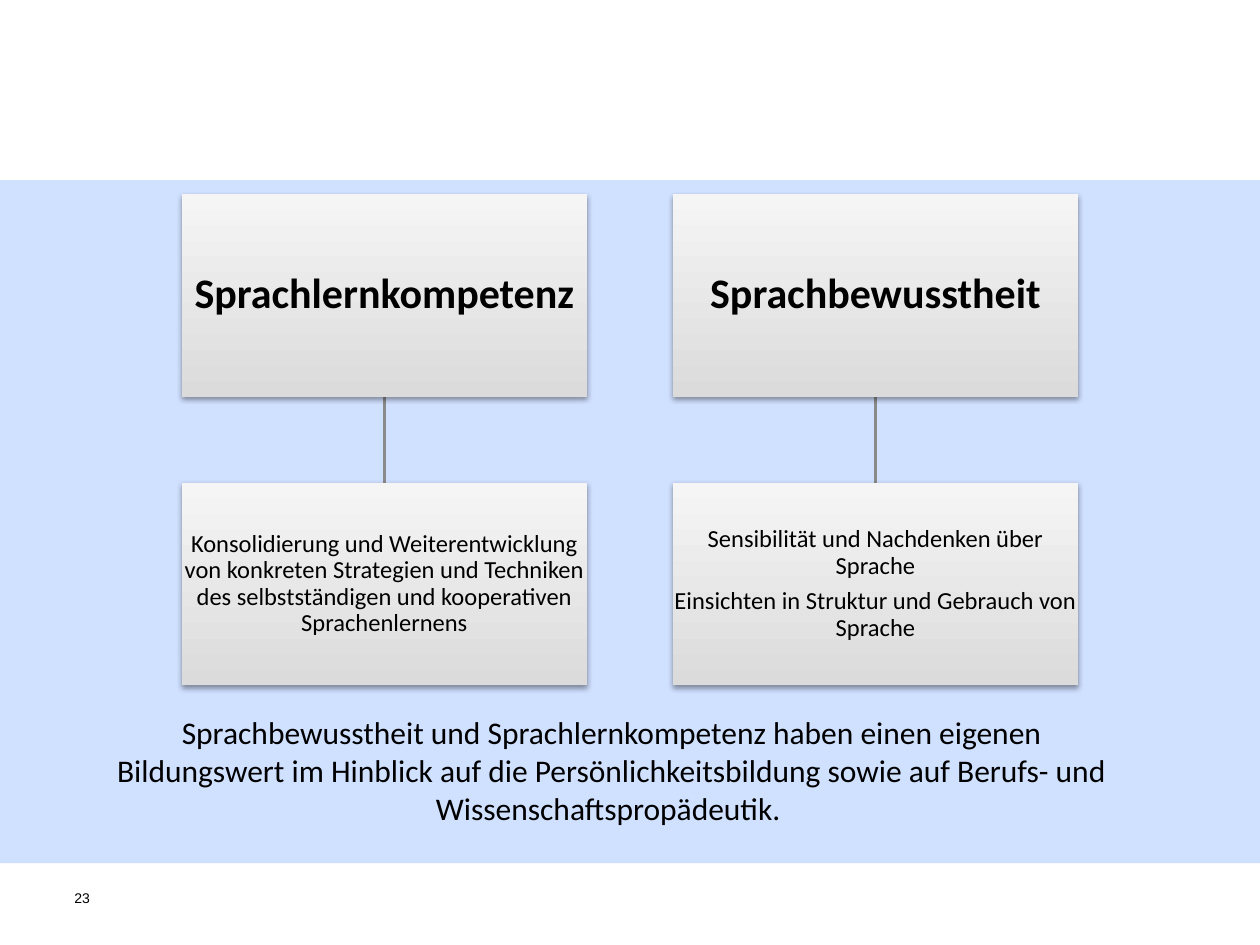
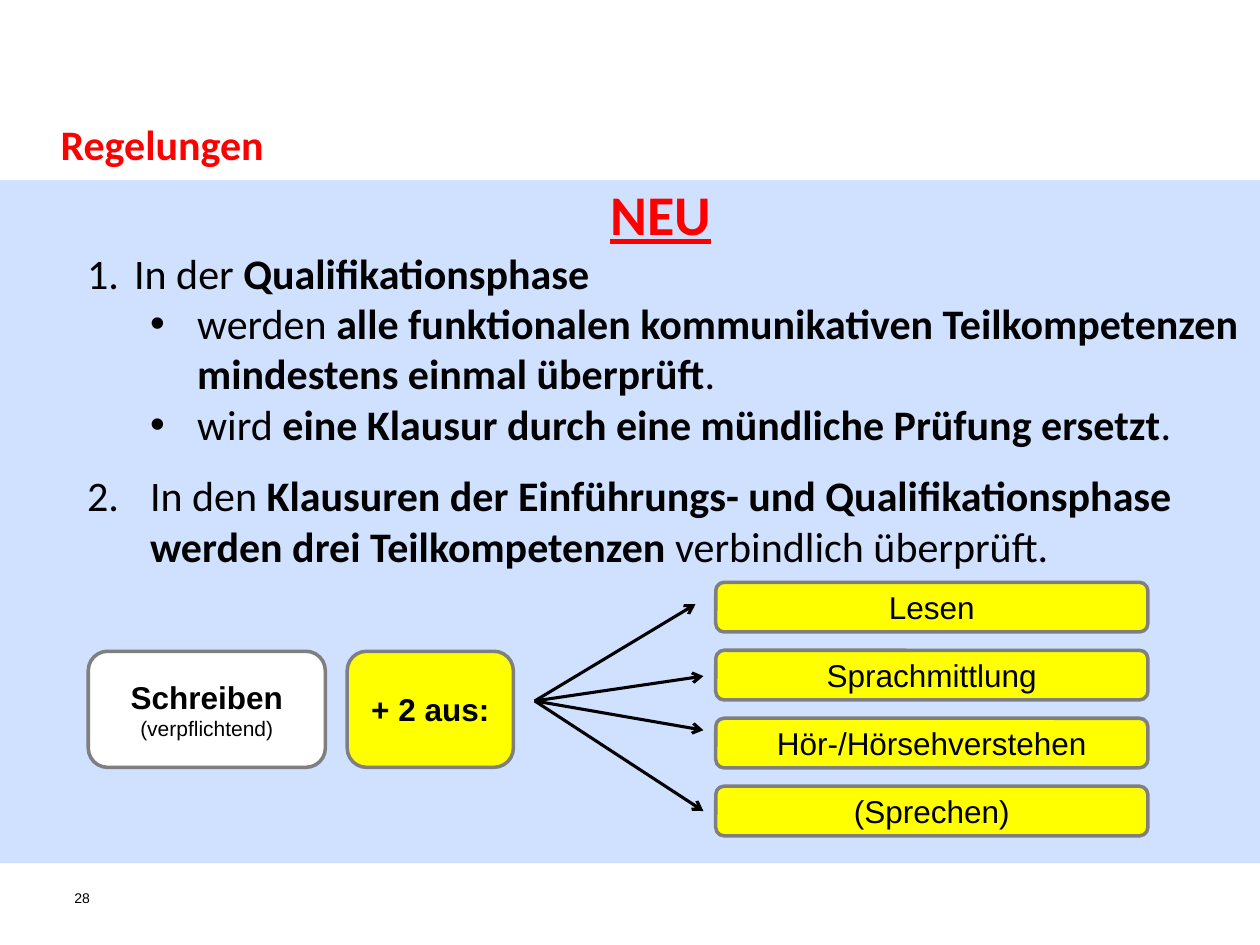
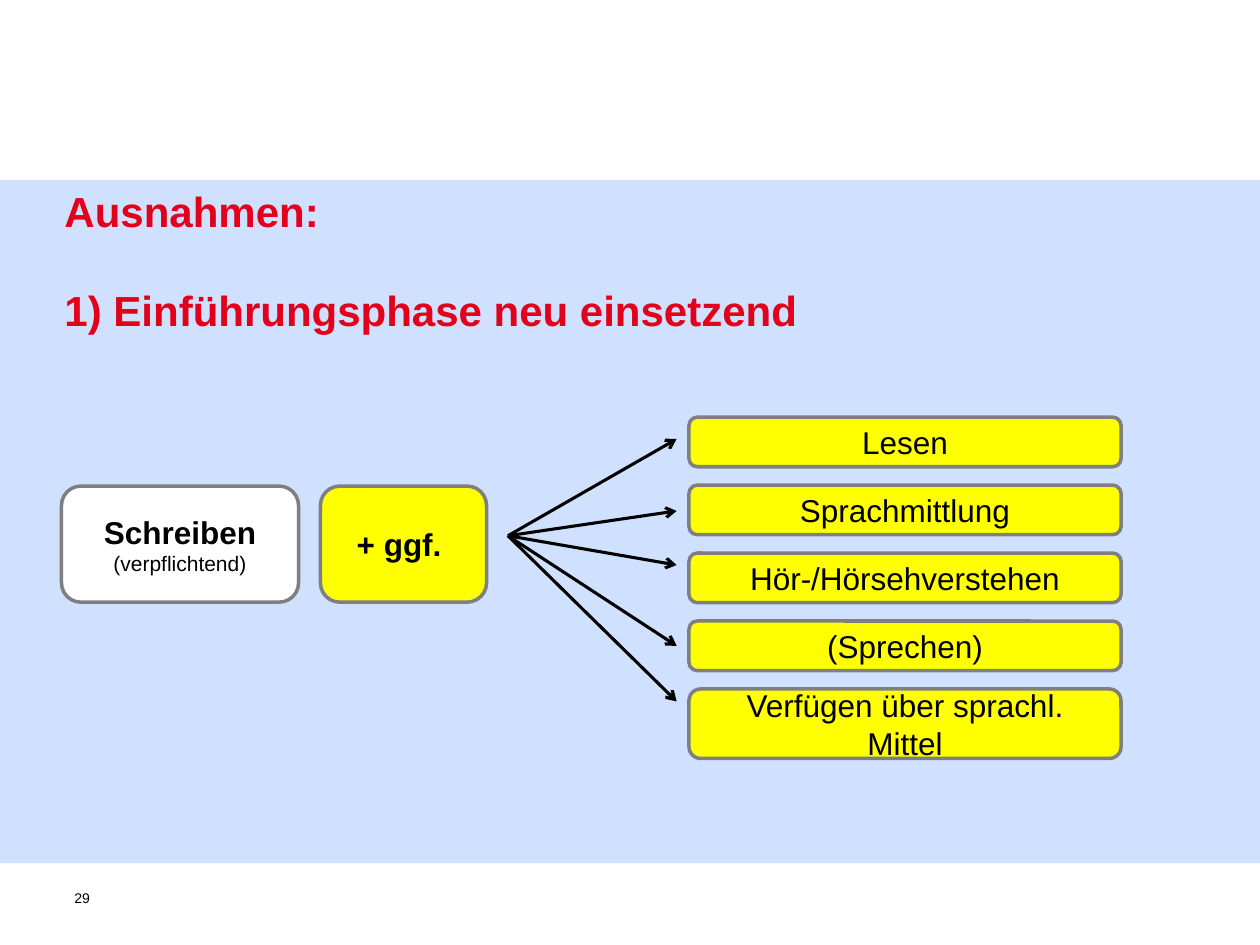
from dataclasses import dataclass
from pptx import Presentation
from pptx.dml.color import RGBColor
from pptx.enum.shapes import MSO_CONNECTOR, MSO_SHAPE
from pptx.enum.text import MSO_ANCHOR, MSO_AUTO_SIZE, PP_ALIGN
from pptx.oxml import parse_xml
from pptx.oxml.ns import nsdecls, qn
from pptx.util import Cm, Pt


@dataclass(frozen=True)
class Style:
    size: float
    font: str = "Calibri"
    color: str = "000000"
    bold: bool = False
    under: bool = False


class Theme:
    band, frame, yellow, white, black = "6699FF", "7F7F7F", "FFFF00", "FFFFFF", "000000"
    dark, light, link = "DBDBDB", "F5F5F5", "8A8A8A"
    head = Style(24, bold=True)
    note = Style(14)
    close = Style(18)
    rule = Style(24, color="FF0000", bold=True)
    new = Style(32, color="FF0000", bold=True, under=True)
    gap = Style(32)
    item = Style(24)
    key = Style(24, bold=True)
    warn = Style(24, "Arial", "E2001A", True)
    box = Style(18, "Arial")
    main = Style(18, "Arial", bold=True)
    small = Style(12, "Arial")
    page = Style(8, "Arial")


T = Theme

GOALS = [
    ("Sprachlernkompetenz", [
        "Konsolidierung und Weiterentwicklung von konkreten Strategien und Techniken "
        "des selbstständigen und kooperativen Sprachenlernens"]),
    ("Sprachbewusstheit", [
        "Sensibilität und Nachdenken über Sprache",
        "Einsichten in Struktur und Gebrauch von Sprache"]),
]
VALUE = (
    "Sprachbewusstheit und Sprachlernkompetenz haben einen eigenen Bildungswert im "
    "Hinblick auf die Persönlichkeitsbildung sowie auf Berufs- und Wissenschaftspropädeutik. ")

RULES = [
    ("none", [("NEU", T.new), (" ", T.gap)]),
    ("one", [("In der ", T.item), ("Qualifikationsphase", T.key)]),
    ("dot", [("werden ", T.item),
             ("alle funktionalen kommunikativen Teilkompetenzen mindestens einmal überprüft", T.key),
             (".", T.item)]),
    ("dot", [("wird ", T.item),
             ("eine Klausur durch eine mündliche Prüfung ersetzt", T.key),
             (".", T.item)]),
    ("two", [("In den ", T.item),
             ("Klausuren der Einführungs- und Qualifikationsphase werden drei Teilkompetenzen ", T.key),
             ("verbindlich überprüft.", T.item)]),
]
MARKS = {
    "none": (0, 0, 0, 0, "<a:buNone {}/>"),
    "one": (0, 0.95, 0.95, 0, '<a:buAutoNum {} type="arabicPeriod"/>'),
    "dot": (1, 2.22, 0.95, 0, '<a:buChar {} char="•"/>'),
    "two": (0, 1.27, 1.27, 12, '<a:buAutoNum {} type="arabicPeriod" startAt="2"/>'),
}

SKILLS = ["Lesen", "Sprachmittlung", "Hör-/Hörsehverstehen", "(Sprechen)"]
EXTRA = "Verfügen über sprachl. Mittel"
TIPS = [-0.95, 0.5, 1.59, 3.22, 4.34]


def write(frame, lines, align=PP_ALIGN.LEFT, pad=None, anchor=MSO_ANCHOR.TOP, gap=0, lead=None):
    frame.word_wrap = True
    frame.auto_size = MSO_AUTO_SIZE.NONE
    frame.vertical_anchor = anchor
    if pad is not None:
        frame.margin_left = frame.margin_right = frame.margin_bottom = frame.margin_top = Cm(pad)
    for i, runs in enumerate(lines):
        para = frame.paragraphs[0] if i == 0 else frame.add_paragraph()
        para.alignment = align
        para.space_before = Pt(gap if i else 0)
        if lead:
            para.line_spacing = lead
        for text, style in runs:
            run = para.add_run()
            run.text = text
            font = run.font
            font.name, font.size = style.font, Pt(style.size)
            font.bold, font.underline = style.bold, style.under
            font.color.rgb = RGBColor.from_string(style.color)


def place(shape, x, y, w, h):
    shape.left, shape.top, shape.width, shape.height = Cm(x), Cm(y), Cm(w), Cm(h)


def block(slide, kind, x, y, w, h, fill, line=None):
    shape = slide.shapes.add_shape(kind, Cm(x), Cm(y), Cm(w), Cm(h))
    shape.shadow.inherit = False
    shape.fill.solid()
    shape.fill.fore_color.rgb = RGBColor.from_string(fill)
    if line:
        shape.line.color.rgb = RGBColor.from_string(line)
        shape.line.width = Pt(2)
    else:
        shape.line.fill.background()
    return shape


def join(slide, start, end, color, width, arrow=False):
    line = slide.shapes.add_connector(MSO_CONNECTOR.STRAIGHT, *map(Cm, start + end))
    line.line.color.rgb = RGBColor.from_string(color)
    line.line.width = Pt(width)
    props = line._element.spPr
    if arrow:
        props.find(qn("a:ln")).append(parse_xml(f'<a:tailEnd {nsdecls("a")} type="arrow"/>'))
    props.append(parse_xml(f'<a:effectLst {nsdecls("a")}/>'))


def add_band(deck, slide):
    band = block(slide, MSO_SHAPE.RECTANGLE, 0, 3.63, 25.4, 13.77, T.band)
    tint = band._element.spPr.find(".//" + qn("a:srgbClr"))
    tint.append(parse_xml(f'<a:alpha {nsdecls("a")} val="30000"/>'))
    band._element.nvSpPr.cNvPr.set("id", "99")
    deck.slide_master.shapes._spTree.insert(2, band._element)


def add_page(deck, layout, number):
    slide = deck.slides.add_slide(deck.slide_layouts[layout])
    label = slide.shapes.add_textbox(Cm(1.5), Cm(17.93), Cm(0.81), Cm(0.94))
    write(label.text_frame, [[(number, T.page)]], pad=0)
    return slide


def add_title(slide, lines, x, y, w, h, gap=0):
    title = slide.shapes.title
    place(title, x, y, w, h)
    write(title.text_frame, lines, pad=0, gap=gap)
    title.text_frame.margin_top = Cm(0.41)


def add_card(slide, x, y, w, h, lines):
    card = block(slide, MSO_SHAPE.RECTANGLE, x, y, w, h, T.light)
    card.fill.gradient()
    card.fill.gradient_angle = 90
    for stop, color in zip(card.fill.gradient_stops, (T.dark, T.light)):
        stop.color.rgb = RGBColor.from_string(color)
    card._element.spPr.find(qn("a:effectLst")).append(parse_xml(
        f'<a:outerShdw {nsdecls("a")} blurRad="40000" dist="20000" dir="5400000" rotWithShape="0">'
        '<a:srgbClr val="000000"><a:alpha val="38000"/></a:srgbClr></a:outerShdw>'))
    write(card.text_frame, lines, PP_ALIGN.CENTER, 0.03, MSO_ANCHOR.MIDDLE, gap=5, lead=0.9)


def add_goals(slide):
    wide, high, top, low = 8.18, 4.09, 3.91, 9.73
    for i, (name, notes) in enumerate(GOALS):
        x = 3.66 + i * 9.9
        mid = x + wide / 2
        join(slide, (mid, top + high), (mid, low), T.link, 2)
        add_card(slide, x, top, wide, high, [[(name, T.head)]])
        add_card(slide, x, low, wide, high, [[(note, T.note)] for note in notes])
    close = slide.shapes.add_textbox(Cm(1.78), Cm(14.25), Cm(21.11), Cm(3.33))
    write(close.text_frame, [[(VALUE, T.close)]], PP_ALIGN.CENTER)


def add_rules(slide):
    body = slide.placeholders[1]
    place(body, 1.5, 3.5, 23.9, 8.2)
    write(body.text_frame, [runs for _, runs in RULES])
    for para, (kind, _) in zip(body.text_frame.paragraphs, RULES):
        level, left, hang, gap, mark = MARKS[kind]
        para.level = level
        para.space_before = Pt(gap)
        props = para._p.get_or_add_pPr()
        props.set("marL", str(Cm(left)))
        props.set("indent", str(-Cm(hang)))
        props.append(parse_xml(mark.format(nsdecls("a"))))
    body.text_frame.paragraphs[0].alignment = PP_ALIGN.CENTER


def add_box(slide, x, y, w, h, fill, lines):
    box = block(slide, MSO_SHAPE.ROUNDED_RECTANGLE, x, y, w, h, fill, T.frame)
    write(box.text_frame, lines, PP_ALIGN.CENTER, anchor=MSO_ANCHOR.MIDDLE)


def add_flow(slide, x, y, plus, skills, first=12.4):
    add_box(slide, x, y, 4.78, 2.34, T.white,
            [[("Schreiben", T.main)], [("(verpflichtend)", T.small)]])
    add_box(slide, x + 5.22, y, 3.35, 2.34, T.yellow, [[(plus, T.main)]])
    for i, (skill, tip) in enumerate(zip(skills, TIPS)):
        high = 1.4 if skill == EXTRA else 1
        add_box(slide, x + 12.65, y - 1.39 + i * 1.37, 8.71, high, T.yellow, [[(skill, T.box)]])
        reach = 12.4 if i else first
        join(slide, (x + 9, y + 1), (x + reach, y + tip), T.black, 1.75, arrow=True)


def main():
    deck = Presentation()
    deck.slide_width, deck.slide_height = Cm(25.4), Cm(19.05)

    goals = add_page(deck, 6, "23")
    add_band(deck, goals)
    add_goals(goals)

    rules = add_page(deck, 1, "28")
    add_title(rules, [[("Regelungen", T.rule)]], 1.22, 1.98, 22.4, 1.65)
    add_rules(rules)
    add_flow(rules, 1.78, 13.13, "+ 2 aus:", SKILLS, first=12.24)

    cases = add_page(deck, 5, "29")
    add_title(cases, [[("Ausnahmen:", T.warn)], [("1) Einführungsphase neu einsetzend", T.warn)]],
              1.3, 3.33, 22.4, 14, gap=28)
    add_flow(cases, 1.24, 9.8, "+ ggf. ", SKILLS + [EXTRA])

    deck.save("out.pptx")


if __name__ == "__main__":
    main()
